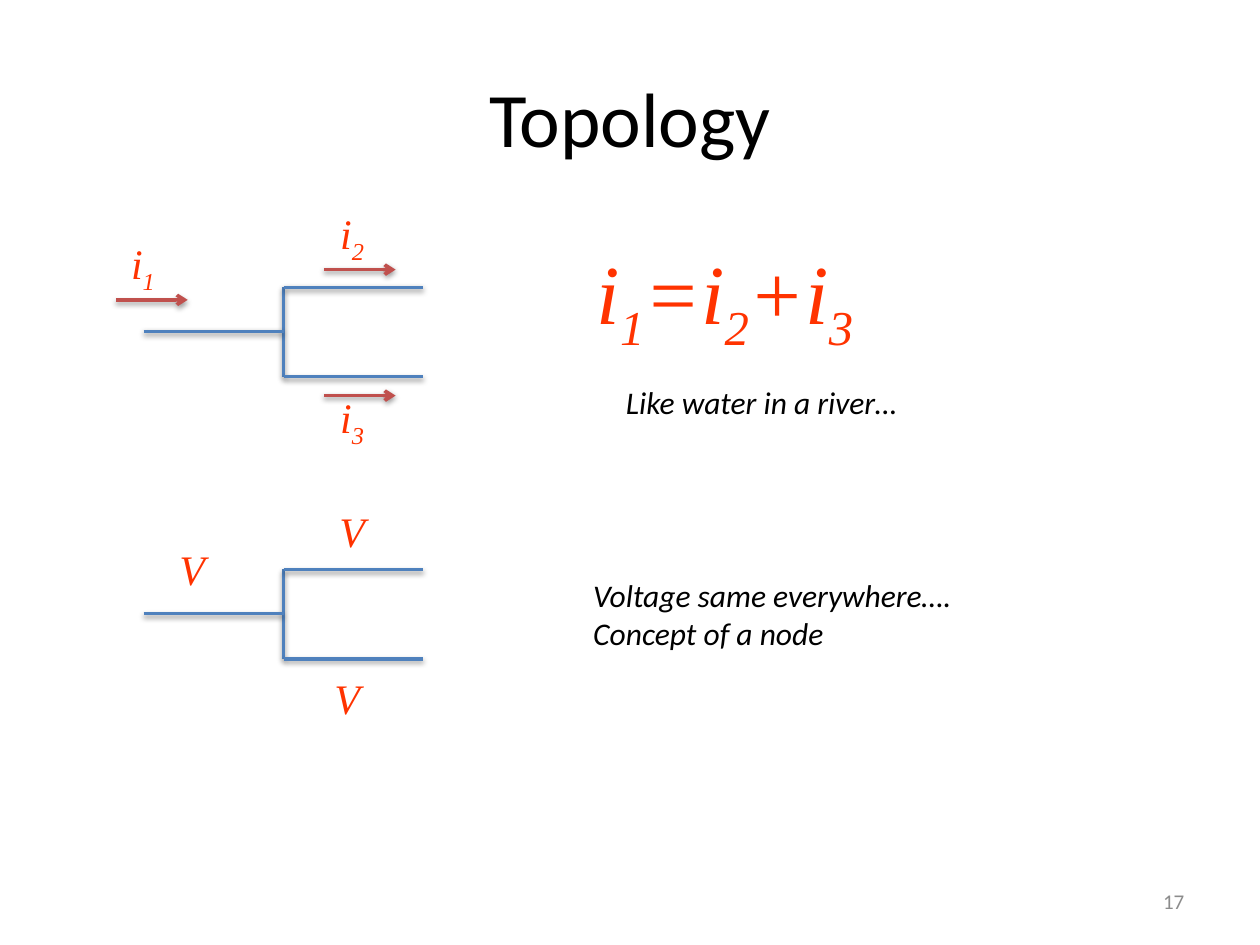
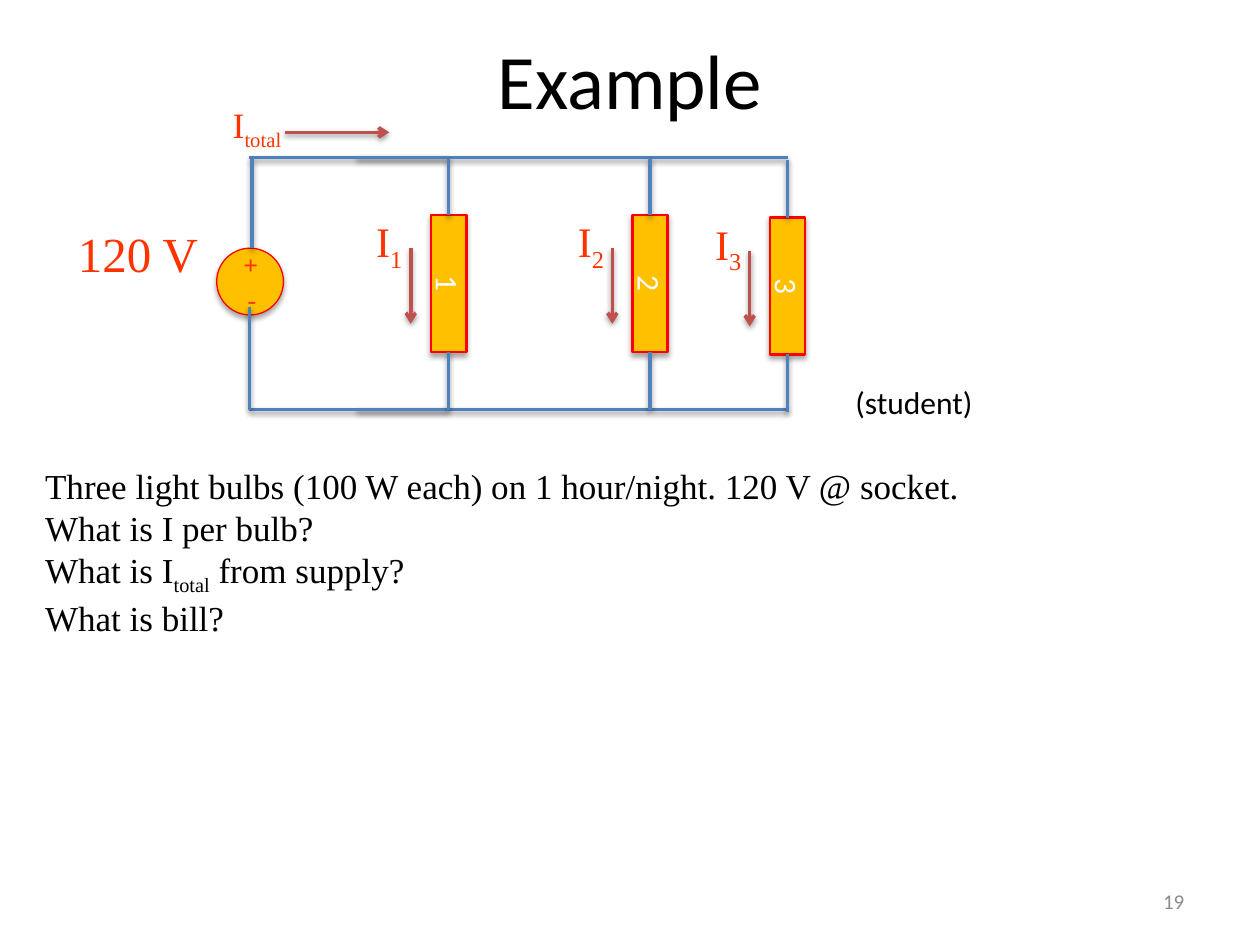
from pptx import Presentation
from pptx.dml.color import RGBColor
from pptx.enum import shapes, text
from pptx.oxml import parse_xml
from pptx.oxml.ns import nsdecls, qn
from pptx.util import Inches, Pt

SANS, SERIF = "Calibri", "Times New Roman"
BLACK, WHITE, GREY = "000000", "FFFFFF", "8C8C8C"
WIRE, ARROW, LABEL = "4F81BD", "C0504D", "FF3300"
BULB, BULB_EDGE = "FFC000", "FF0000"


def color(value):
    return RGBColor.from_string(value)


def set_font(para, size, name, fill, italic=False, bold=False):
    font = para.font
    font.size, font.name = Pt(size), name
    font.italic, font.bold = italic, bold
    font.color.rgb = color(fill)


def write(frame, content, align, **font):
    """Fill a frame line by line; every second part between bars is a subscript."""
    for index, line in enumerate(content.split("\n")):
        para = frame.add_paragraph() if index else frame.paragraphs[0]
        para.alignment = align
        set_font(para, **font)
        for place, part in enumerate(line.split("|")):
            if part:
                span = para.add_run()
                span.text = part
                if place % 2:
                    span.font._element.set("baseline", "-25000")


def add_shadow(item, alpha, distance):
    properties = item.element.spPr
    properties.append(parse_xml(
        f'<a:effectLst {nsdecls("a")}><a:outerShdw blurRad="{Pt(3.1)}" '
        f'dist="{Pt(distance)}" dir="5400000" rotWithShape="0">'
        f'<a:srgbClr val="{BLACK}"><a:alpha val="{alpha * 1000}"/></a:srgbClr>'
        f'</a:outerShdw></a:effectLst>'))


def add_line(page, start, end, stroke=WIRE):
    line = page.shapes.add_connector(
        shapes.MSO_CONNECTOR.STRAIGHT, *map(Inches, (*start, *end)))
    line.line.color.rgb = color(stroke)
    line.line.width = Pt(2)
    add_shadow(line, 38, 1.6)
    return line


def add_arrow(page, start, end):
    line = add_line(page, start, end, ARROW)
    outline = line.element.spPr.find(qn("a:ln"))
    outline.append(parse_xml(f'<a:tailEnd {nsdecls("a")} type="arrow"/>'))


def add_label(page, content, left, top, width, height, size=24, name=SERIF,
              fill=LABEL, align=text.PP_ALIGN.CENTER, **style):
    box = page.shapes.add_textbox(*map(Inches, (left, top, width, height)))
    frame = box.text_frame
    frame.word_wrap = True
    frame.vertical_anchor = text.MSO_ANCHOR.MIDDLE
    frame.margin_left = frame.margin_right = 0
    frame.margin_top = frame.margin_bottom = 0
    write(frame, content, align, size=size, name=name, fill=fill, **style)


def add_note(page, content, left, top, width, height, size=18, name=SANS,
             italic=False):
    box = page.shapes.add_textbox(*map(Inches, (left, top, width, height)))
    box.text_frame.word_wrap = False
    box.text_frame.auto_size = text.MSO_AUTO_SIZE.SHAPE_TO_FIT_TEXT
    write(box.text_frame, content, text.PP_ALIGN.LEFT,
          size=size, name=name, fill=BLACK, italic=italic)


def add_body(page, kind, left, top, width, height, edge_width):
    """Draw a filled circuit part."""
    body = page.shapes.add_shape(kind, *map(Inches, (left, top, width, height)))
    body.fill.solid()
    body.fill.fore_color.rgb = color(BULB)
    body.line.color.rgb = color(BULB_EDGE)
    body.line.width = Pt(edge_width)
    add_shadow(body, 35, 1.8)
    return body


def add_page(deck, title, title_top, number):
    page = deck.slides.add_slide(deck.slide_layouts[5])
    box = page.shapes.title
    box.left, box.top, box.width, box.height = map(
        Inches, (0.5, title_top, 9, 1.25))
    box.text_frame.vertical_anchor = text.MSO_ANCHOR.MIDDLE
    write(box.text_frame, title, text.PP_ALIGN.CENTER,
          size=44, name=SANS, fill=BLACK)
    add_label(page, number, 7.17, 6.95, 2.23, 0.4, size=12, name=SANS,
              fill=GREY, align=text.PP_ALIGN.RIGHT)
    return page


def add_fork(page, top):
    """Draw one wire that splits into two branches."""
    start, split, end, bottom = 1.14, 2.25, 3.36, top + 0.71
    add_line(page, (split, bottom), (split, top))
    add_line(page, (start, top + 0.35), (split, top + 0.35))
    for y in (top, bottom):
        add_line(page, (split, y), (end, y))


def add_bulb(page, number, x, top):
    """Draw a bulb with its two leads and its current, hanging from top."""
    length, thickness, lead = 1.09, 0.28, 0.46
    middle = top + 1
    body = add_body(page, shapes.MSO_SHAPE.RECTANGLE, x - length / 2,
                    middle - thickness / 2, length, thickness, 1.5)
    body.rotation = 90
    body.text_frame.vertical_anchor = text.MSO_ANCHOR.MIDDLE
    write(body.text_frame, str(number), text.PP_ALIGN.CENTER,
          size=18, name=SANS, fill=WHITE)
    add_line(page, (x, top + 2), (x, top + 2 - lead))
    add_line(page, (x, top + lead), (x, top))
    add_arrow(page, (x - 0.3, top + 0.72), (x - 0.3, top + 1.32))
    add_label(page, f"I|{number}", x - 0.79, top + 0.45, 0.64, 0.48)


def add_source(page):
    source = page.shapes.add_group_shape()
    add_body(source, shapes.MSO_SHAPE.OVAL, 1.72, 1.97, 0.53, 0.53, 0.75)
    add_label(source, "+", 1.86, 1.93, 0.26, 0.33, size=14.8, bold=True)
    add_label(source, "-", 1.87, 2.21, 0.26, 0.33, size=14.8)
    add_label(page, "120 V", 0.47, 1.5, 1.25, 1.01, size=28)


def build_topology(deck):
    page = add_page(deck, "Topology", 0.3, "17")
    add_fork(page, 2.28)
    for x, y in ((0.92, 2.38), (2.57, 2.14), (2.57, 3.14)):
        add_arrow(page, (x, y), (x + 0.57, y))
    add_fork(page, 4.52)
    for content, left, top in (
            ("i|1", 0.75, 1.81), ("i|2", 2.41, 1.57), ("i|3", 2.41, 3.03),
            ("V", 1.14, 4.21), ("V", 2.41, 3.91), ("V", 2.37, 5.23)):
        add_label(page, content, left, top, 0.77, 0.61, italic=True)
    add_label(page, "i|1|=i|2|+i|3", 4.01, 1.55, 3.49, 1.62, size=48,
              italic=True)
    add_note(page, "Like water in a river…", 4.87, 2.99, 2.37, 0.4, italic=True)
    add_note(page, "Voltage same everywhere….\nConcept of a node",
             4.61, 4.52, 3.08, 0.71, italic=True)


def build_example(deck):
    page = add_page(deck, "Example", 0, "19")
    add_source(page)
    top, bottom = 1.25, 3.25
    for y in (top, bottom):
        add_line(page, (2.83, y), (3.56, y))
        add_line(page, (1.98, y), (6.25, y))
    add_line(page, (1.98, bottom), (1.98, 2.44))
    add_line(page, (2, 1.97), (2, top))
    for number, (x, y) in enumerate(((3.56, top), (5.16, top), (6.25, 1.27)), 1):
        add_bulb(page, number, x, y)
    add_arrow(page, (2.26, 1.05), (3.09, 1.05))
    add_label(page, "I|total", 1.72, 0.77, 0.64, 0.48, size=20.4)
    add_note(page, "Three light bulbs (100 W each) on 1 hour/night. "
             "120 V @ socket.\nWhat is I per bulb?\n"
             "What is I|total| from supply?\nWhat is bill?",
             0.26, 3.64, 7.57, 1.45, size=20, name=SERIF)
    add_note(page, "(student)", 6.69, 2.99, 1.14, 0.4)


def main():
    deck = Presentation()
    deck.slide_width, deck.slide_height = Inches(10), Inches(7.5)
    build_topology(deck)
    build_example(deck)
    deck.save("out.pptx")


if __name__ == "__main__":
    main()
